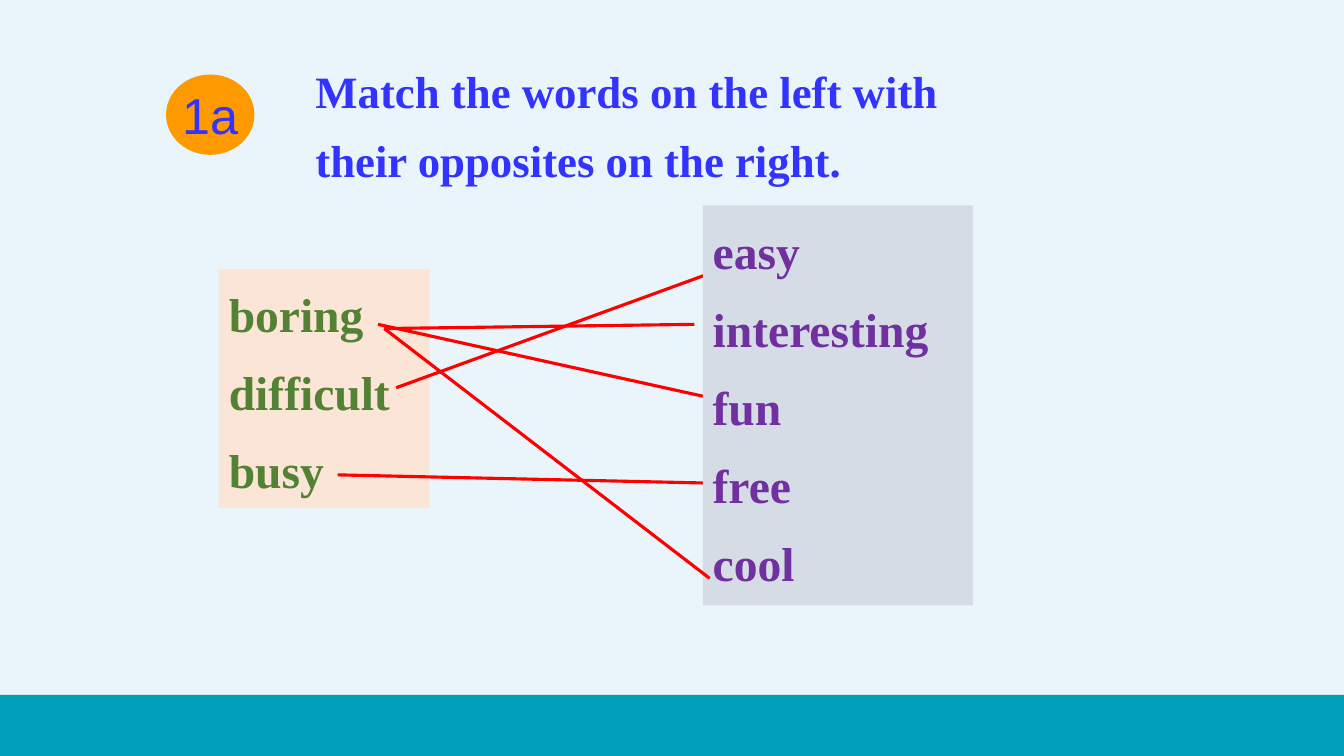
from dataclasses import dataclass

from lxml.etree import SubElement
from pptx import Presentation
from pptx.dml.color import RGBColor
from pptx.enum.shapes import MSO_CONNECTOR, MSO_SHAPE
from pptx.enum.text import MSO_ANCHOR, PP_ALIGN
from pptx.oxml.ns import qn
from pptx.util import Pt


@dataclass(frozen=True)
class Theme:
    serif: str = "Times New Roman"
    sans: str = "Arial"
    background: str = "EAF5FB"
    band: str = "009FB9"
    title: str = "3333FF"
    badge: str = "FF9900"
    left_fill: str = "FBE5D6"
    left_text: str = "548235"
    right_fill: str = "D6DCE5"
    right_text: str = "7030A0"
    match_line: str = "FF0000"
    title_size: float = 32
    badge_size: float = 36
    word_size: float = 34
    line_width: float = 2.25


THEME = Theme()
SLIDE_WIDTH, SLIDE_HEIGHT = 960, 540
BAND_HEIGHT = 43.6
WORD_GAP = 6.8

TITLE = "Match the words on the left with their opposites on the right."
BADGE = "1a"
LEFT_WORDS = ["boring", "difficult", "busy"]
RIGHT_WORDS = ["easy", "interesting", "fun", "free", "cool"]

TITLE_BOX = (218.2, 30.2, 512, 103)
BADGE_BOX = (118.6, 53.2, 63.2, 57.4)
LEFT_BOX = (156.4, 192, 150.3, 171)
RIGHT_BOX = (502, 146.7, 193, 285.7)

# Each match runs from a left word to a right word: (x, y), (x, y)
MATCHES_BEHIND_PANEL = [
    ((241.2, 339.2), (502, 345)),      # busy, free
    ((283, 277), (515.5, 192.2)),      # difficult, easy
    ((274.5, 234.7), (496, 231.7)),    # boring, interesting
]
MATCHES_OVER_PANEL = [
    ((270, 231.7), (502, 283)),        # boring, fun
    ((274.5, 234.7), (507, 413.2)),    # boring, cool
]


def color(value):
    return RGBColor.from_string(value)


def add_filled(slide, preset, box, fill):
    shape = slide.shapes.add_shape(preset, *map(Pt, box))
    shape.shadow.inherit = False
    shape.fill.solid()
    shape.fill.fore_color.rgb = color(fill)
    shape.line.fill.background()
    return shape


def style(paragraph, name, size, text_color, bold, align=PP_ALIGN.LEFT):
    paragraph.alignment = align
    font = paragraph.runs[0].font
    font.name, font.size, font.bold = name, Pt(size), bold
    font.color.rgb = color(text_color)


def add_title(slide):
    frame = slide.shapes.add_textbox(*map(Pt, TITLE_BOX)).text_frame
    frame.word_wrap = True
    frame.text = TITLE
    paragraph = frame.paragraphs[0]
    paragraph.line_spacing = 1.3
    style(paragraph, THEME.serif, THEME.title_size, THEME.title, True)


def add_badge(slide):
    frame = add_filled(slide, MSO_SHAPE.OVAL, BADGE_BOX, THEME.badge).text_frame
    frame.word_wrap = False
    frame.vertical_anchor = MSO_ANCHOR.MIDDLE
    frame.text = BADGE
    style(frame.paragraphs[0], THEME.sans, THEME.badge_size, THEME.title,
          False, PP_ALIGN.CENTER)


def add_word_panel(slide, box, words, fill, text_color):
    frame = add_filled(slide, MSO_SHAPE.RECTANGLE, box, fill).text_frame
    frame.word_wrap = True
    frame.vertical_anchor = MSO_ANCHOR.TOP
    frame.text = "\n".join(words)
    for index, paragraph in enumerate(frame.paragraphs):
        paragraph.line_spacing = 1.2
        if index:
            paragraph.space_before = Pt(WORD_GAP)
        style(paragraph, THEME.serif, THEME.word_size, text_color, True)


def add_matches(slide, matches):
    for start, end in matches:
        connector = slide.shapes.add_connector(
            MSO_CONNECTOR.STRAIGHT, *map(Pt, start + end))
        connector.line.color.rgb = color(THEME.match_line)
        connector.line.width = Pt(THEME.line_width)
        SubElement(connector._element.spPr, qn("a:effectLst"))


def main():
    presentation = Presentation()
    presentation.slide_width = Pt(SLIDE_WIDTH)
    presentation.slide_height = Pt(SLIDE_HEIGHT)
    slide = presentation.slides.add_slide(presentation.slide_layouts[6])
    slide.background.fill.solid()
    slide.background.fill.fore_color.rgb = color(THEME.background)

    band_box = (0, SLIDE_HEIGHT - BAND_HEIGHT, SLIDE_WIDTH, BAND_HEIGHT)
    add_filled(slide, MSO_SHAPE.RECTANGLE, band_box, THEME.band)
    add_title(slide)
    add_badge(slide)
    add_word_panel(slide, LEFT_BOX, LEFT_WORDS, THEME.left_fill, THEME.left_text)
    add_matches(slide, MATCHES_BEHIND_PANEL)
    add_word_panel(slide, RIGHT_BOX, RIGHT_WORDS, THEME.right_fill, THEME.right_text)
    add_matches(slide, MATCHES_OVER_PANEL)
    presentation.save("out.pptx")


if __name__ == "__main__":
    main()
